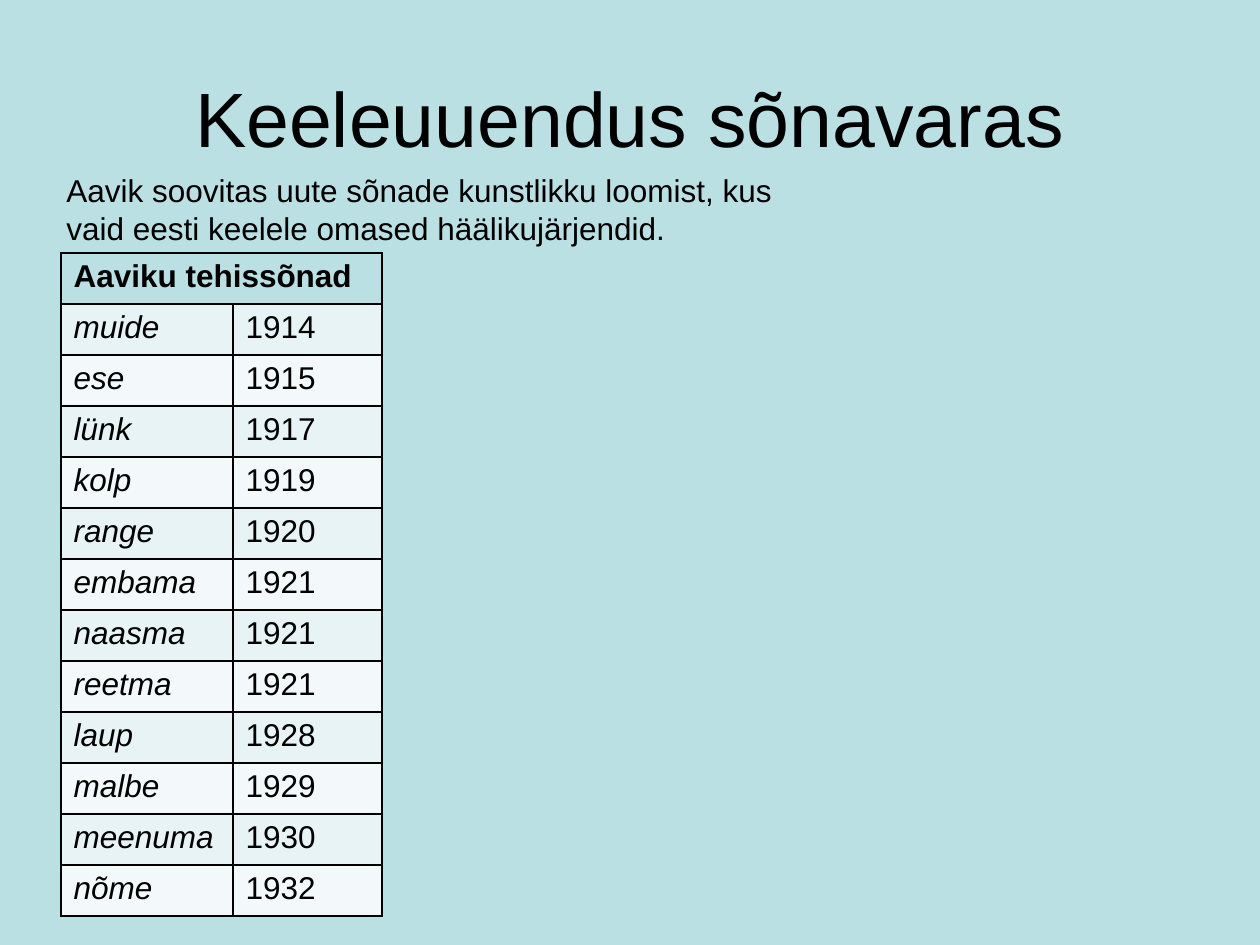
from lxml.etree import SubElement
from pptx import Presentation
from pptx.dml.color import RGBColor
from pptx.enum.text import MSO_ANCHOR, PP_ALIGN
from pptx.oxml.ns import qn
from pptx.util import Pt

TITLE = "Keeleuuendus sõnavaras"
INTRO = ("Aavik soovitas uute sõnade kunstlikku loomist, kus vaid eesti keelele "
         "omased häälikujärjendid.")
TABLE_HEADING = "Aaviku tehissõnad"
COINED_WORDS = [
    ("muide", 1914), ("ese", 1915), ("lünk", 1917), ("kolp", 1919),
    ("range", 1920), ("embama", 1921), ("naasma", 1921), ("reetma", 1921),
    ("laup", 1928), ("malbe", 1929), ("meenuma", 1930), ("nõme", 1932),
]

THEME = {
    "font": "Arial", "title_size": 44, "body_size": 18, "border_width": 1,
    "ink": "000000", "background": "BBE0E3", "bands": ("E7F3F4", "F3F9FA"),
}

SLIDE_SIZE = (1260, 945)
TITLE_BOX = (63, 38, 1134, 157)
INTRO_BOX = (54, 165, 745, 89)
TABLE_LEFT, TABLE_TOP = 61, 253
COLUMN_WIDTHS = (172, 149)
ROW_HEIGHT = 51


def px(length):
    return round(length * 914400 / 126)


def write(frame, text, size=THEME["body_size"], **emphasis):
    frame.text = text
    font = frame.paragraphs[0].runs[0].font
    font.color.rgb = RGBColor.from_string(THEME["ink"])
    style = {"name": THEME["font"], "size": Pt(size), **emphasis}
    for attribute, value in style.items():
        setattr(font, attribute, value)


def add_borders(cell):
    """Draw all four sides; call before filling, as lines precede the fill."""
    properties = cell._tc.get_or_add_tcPr()
    for side in ("a:lnL", "a:lnR", "a:lnT", "a:lnB"):
        line = SubElement(properties, qn(side), w=str(Pt(THEME["border_width"])))
        solid = SubElement(line, qn("a:solidFill"))
        SubElement(solid, qn("a:srgbClr"), val=THEME["ink"])


def style_cell(cell, color):
    add_borders(cell)
    cell.fill.solid()
    cell.fill.fore_color.rgb = RGBColor.from_string(color)


def add_title(slide):
    title = slide.shapes.title
    for attribute, value in zip(("left", "top", "width", "height"), TITLE_BOX):
        setattr(title, attribute, px(value))
    write(title.text_frame, TITLE, THEME["title_size"])
    title.text_frame.vertical_anchor = MSO_ANCHOR.MIDDLE
    title.text_frame.paragraphs[0].alignment = PP_ALIGN.CENTER


def add_intro(slide):
    intro = slide.shapes.add_textbox(*map(px, INTRO_BOX)).text_frame
    intro.word_wrap = True
    write(intro, INTRO)


def add_word_table(slide):
    row_count = len(COINED_WORDS) + 1
    words = slide.shapes.add_table(
        row_count, len(COLUMN_WIDTHS), px(TABLE_LEFT), px(TABLE_TOP),
        px(sum(COLUMN_WIDTHS)), px(ROW_HEIGHT * row_count)).table
    for column, width in zip(words.columns, COLUMN_WIDTHS):
        column.width = px(width)
    for row in words.rows:
        row.height = px(ROW_HEIGHT)

    heading = words.cell(0, 0)
    heading.merge(words.cell(0, 1))
    for cell in words.rows[0].cells:
        style_cell(cell, THEME["background"])
    write(heading.text_frame, TABLE_HEADING, bold=True)

    for index, (word, year) in enumerate(COINED_WORDS):
        word_cell, year_cell = words.rows[index + 1].cells
        for cell in (word_cell, year_cell):
            style_cell(cell, THEME["bands"][index % 2])
        write(word_cell.text_frame, word, bold=False, italic=True)
        write(year_cell.text_frame, str(year), bold=False)


def main():
    deck = Presentation()
    deck.slide_width, deck.slide_height = map(px, SLIDE_SIZE)
    slide = deck.slides.add_slide(deck.slide_layouts[5])
    slide.background.fill.solid()
    slide.background.fill.fore_color.rgb = RGBColor.from_string(THEME["background"])
    add_title(slide)
    add_intro(slide)
    add_word_table(slide)
    deck.save("out.pptx")


if __name__ == "__main__":
    main()
